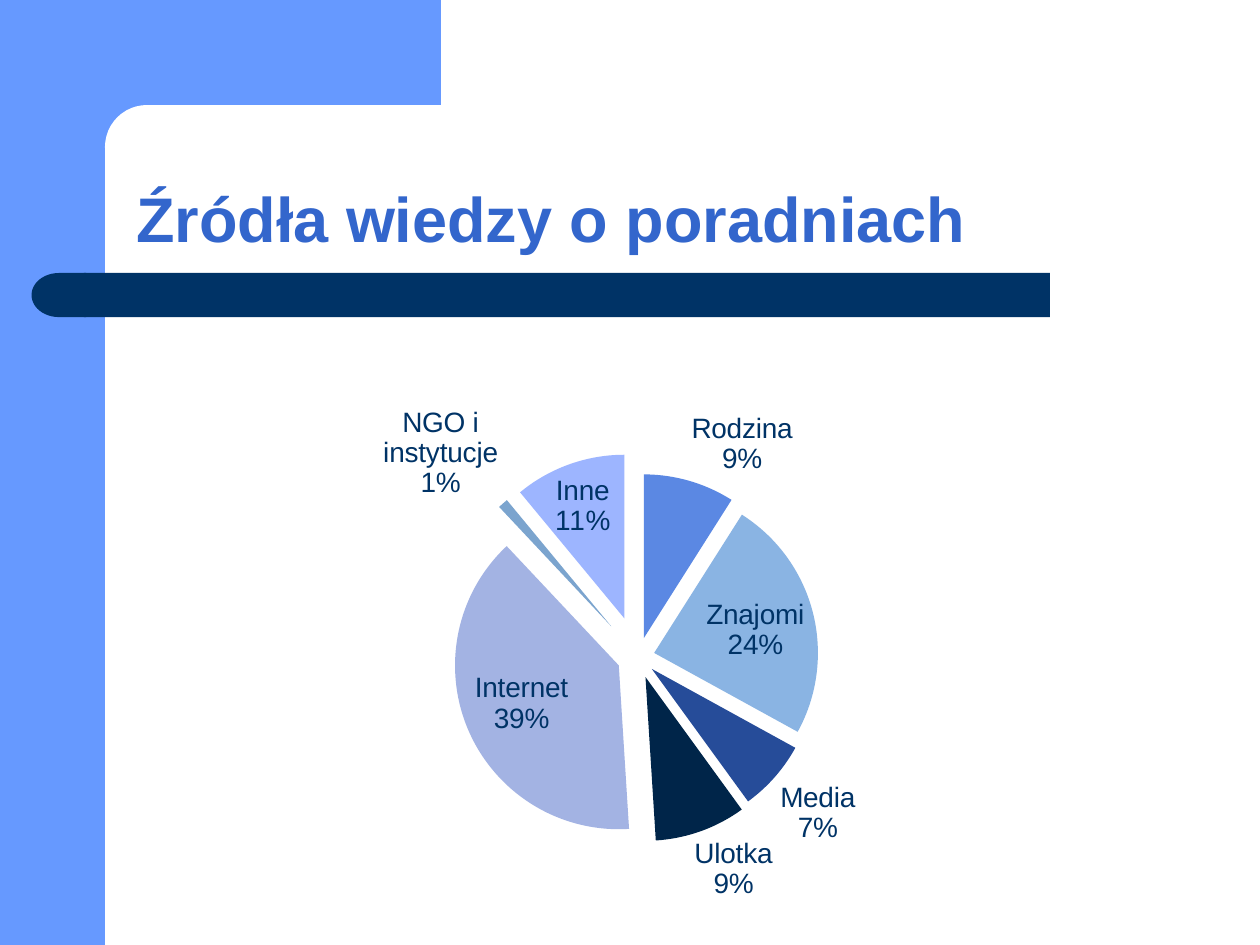
from dataclasses import dataclass

from pptx import Presentation
from pptx.chart.data import CategoryChartData
from pptx.dml.color import RGBColor
from pptx.enum.chart import XL_CHART_TYPE as ChartType, XL_LABEL_POSITION as LabelPosition
from pptx.enum.shapes import MSO_SHAPE as Preset
from pptx.enum.text import MSO_ANCHOR as Anchor
from pptx.oxml import parse_xml
from pptx.oxml.ns import nsdecls
from pptx.util import Inches, Pt


@dataclass(frozen=True)
class Theme:
    font: str = "Arial"
    title_size: int = 36
    label_size: int = 16
    sky: str = "6699FF"
    navy: str = "003366"
    title: str = "3366CC"
    paper: str = "FFFFFF"


# Category, share in percent, colour, distance from the centre
SLICES = [
    ("Rodzina", 9, "5B88E3", 12),
    ("Znajomi", 24, "8AB4E3", 10),
    ("Media", 7, "264C99", 11),
    ("Ulotka", 9, "002549", 13),
    ("Internet", 39, "A3B3E3", 13),
    ("NGO i instytucje", 1, "7BA4CE", 25),
    ("Inne", 11, "9DB5FF", 25),
]


def color(value):
    return RGBColor.from_string(value)


def write(frame, text, *, font, size, ink, bold=False, anchor=Anchor.TOP, spacing=1.0):
    frame.word_wrap = True
    frame.vertical_anchor = anchor
    paragraph = frame.paragraphs[0]
    paragraph.line_spacing = spacing
    run = paragraph.add_run()
    run.text = text
    run.font.name, run.font.size, run.font.bold = font, Pt(size), bold
    run.font.color.rgb = color(ink)


class SlideBuilder:
    """Places elements on a grid of 12 columns by 9 rows."""

    def __init__(self, presentation, theme):
        self.theme = theme
        self.column = presentation.slide_width / 12
        self.row = presentation.slide_height / 9
        self.slide = presentation.slides.add_slide(presentation.slide_layouts[6])

    def box(self, left, top, width, height):
        return (int(left * self.column), int(top * self.row),
                int(width * self.column), int(height * self.row))

    def block(self, area, fill, preset=Preset.RECTANGLE, rotation=0):
        shape = self.slide.shapes.add_shape(preset, *self.box(*area))
        shape.shadow.inherit = False
        shape.fill.solid()
        shape.fill.fore_color.rgb = color(fill)
        shape.line.fill.background()
        shape.rotation = rotation
        return shape

    def title(self, area, text):
        shape = self.slide.shapes.add_textbox(*self.box(*area))
        write(shape.text_frame, text, font=self.theme.font, size=self.theme.title_size,
              ink=self.theme.title, bold=True, anchor=Anchor.BOTTOM, spacing=0.9)

    def pie(self, area, slices, plot_area):
        data = CategoryChartData()
        data.categories = [name for name, *_ in slices]
        data.add_series("Series 1", [share for _, share, *_ in slices])
        chart = self.slide.shapes.add_chart(ChartType.PIE, *self.box(*area), data).chart
        chart.has_legend = False
        chart.has_title = False
        chart.font.name = self.theme.font
        chart.font.size = Pt(self.theme.label_size)
        chart.font.color.rgb = color(self.theme.navy)
        plot = chart.plots[0]
        plot.vary_by_categories = True

        # Slice colours and explosion
        for index, (_, _, fill, distance) in enumerate(slices):
            point = plot.series[0].points[index]
            point.format.fill.solid()
            point.format.fill.fore_color.rgb = color(fill)
            point.format.line.fill.background()
            explosion = parse_xml(f'<c:explosion {nsdecls("c")} val="{distance}"/>')
            point_xml = plot.series[0]._element.findall(".//{*}dPt")[index]
            point_xml.find("{*}spPr").addprevious(explosion)

        # Category and percentage on two lines
        plot.has_data_labels = True
        labels = plot.data_labels
        labels.show_value = False
        labels.show_category_name = True
        labels.show_percentage = True
        labels.number_format = "0%"
        labels.number_format_is_linked = False
        labels.position = LabelPosition.BEST_FIT
        labels.font.name = self.theme.font
        labels.font.size = Pt(self.theme.label_size)
        labels.font.color.rgb = color(self.theme.navy)
        separator = parse_xml(f'<c:separator {nsdecls("c")}>\n</c:separator>')
        labels._element.find("{*}showBubbleSize").addnext(separator)

        # Plot area as shares of the chart
        places = "".join(f'<c:{key} val="{value}"/>' for key, value in zip("xywh", plot_area))
        layout = parse_xml(
            f'<c:layout {nsdecls("c")}><c:manualLayout><c:layoutTarget val="inner"/>'
            f'<c:xMode val="edge"/><c:yMode val="edge"/>{places}</c:manualLayout></c:layout>')
        plot_xml = chart._chartSpace.find(".//{*}plotArea")
        for old in plot_xml.findall("{*}layout"):
            plot_xml.remove(old)
        plot_xml.insert(0, layout)


def main():
    presentation = Presentation()
    presentation.slide_width, presentation.slide_height = Inches(10), Inches(7.5)
    theme = Theme()
    builder = SlideBuilder(presentation, theme)

    # Blue frame with a rounded inner corner
    builder.block((0, 0, 1, 9), theme.sky)
    builder.block((0.9, 0, 3.3, 1.4), theme.sky)
    corner = builder.block((1, 1, 6.7, 0.8), theme.paper, Preset.ROUNDED_RECTANGLE)
    corner.adjustments[0] = 0.5

    # Title bar with a rounded left end
    builder.block((0.8, 2.6, 9.2, 0.42), theme.navy)
    builder.block((0.3, 2.6, 0.52, 0.42), theme.navy, Preset.FLOWCHART_DELAY, rotation=180)

    # Title and chart
    builder.title((1.18, 1, 10.52, 1.5), "Źródła wiedzy o poradniach")
    builder.pie((2.12, 3.46, 8, 5.33), SLICES, plot_area=(0.3, 0.23, 0.39, 0.59))

    presentation.save("out.pptx")


if __name__ == "__main__":
    main()
